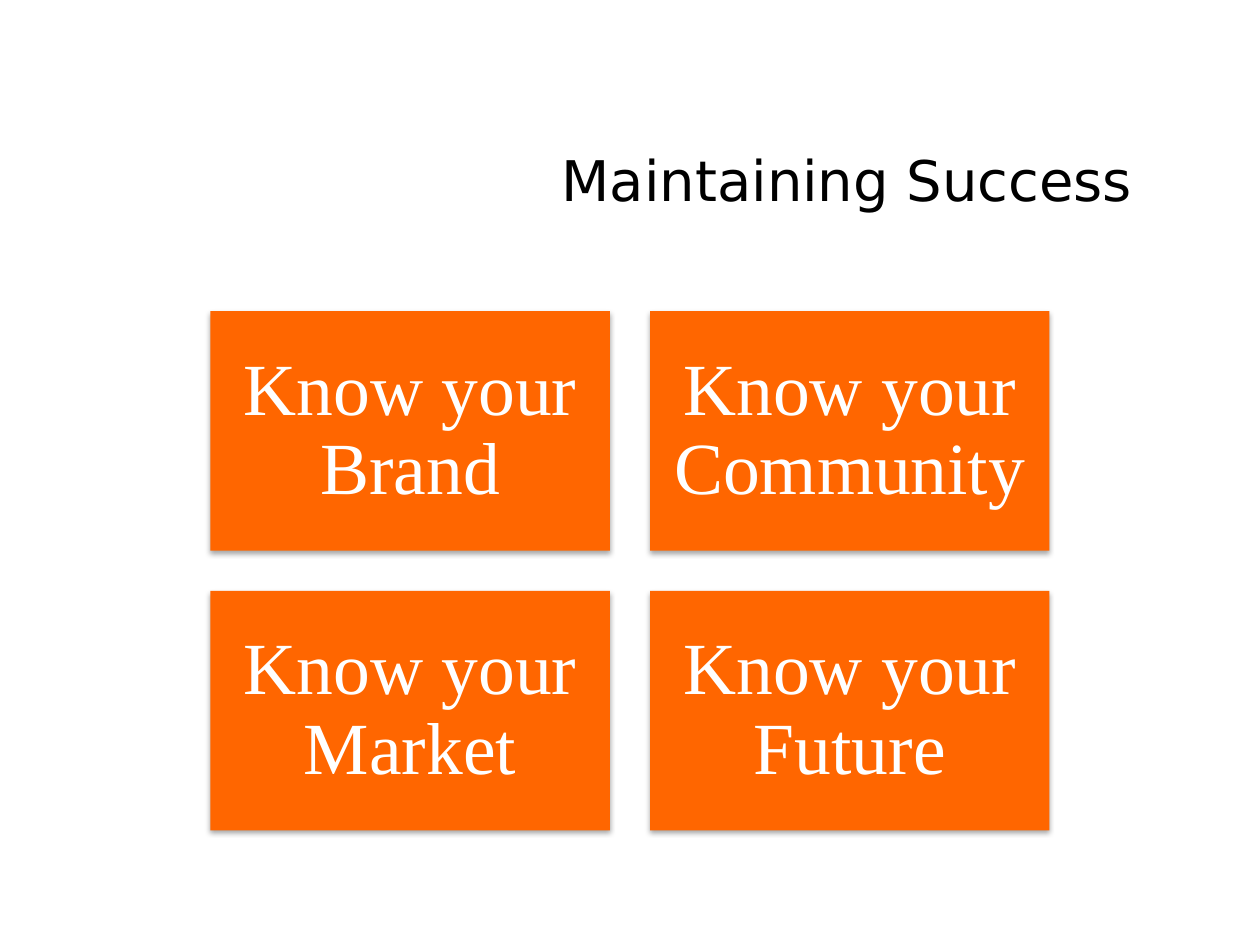
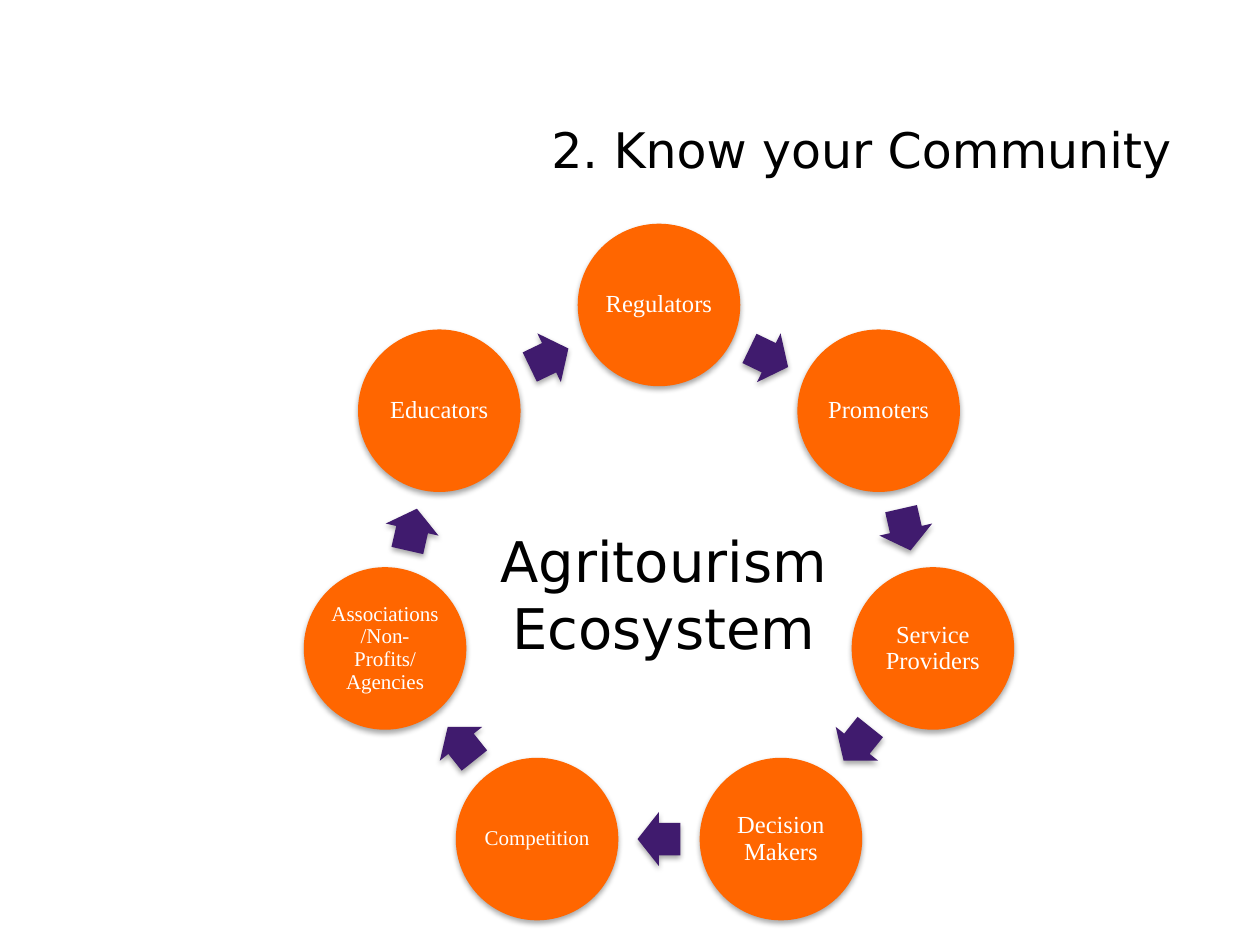
from math import cos, pi, sin

from lxml import etree
from pptx import Presentation
from pptx.dml.color import RGBColor
from pptx.enum import shapes, text
from pptx.util import Inches, Pt

COLORS = {"accent": "FF6600", "arrow": "401B6E", "heading": "000000", "label": "FFFFFF"}
HEADING_FONT, LABEL_FONT = "DejaVu Sans", "Times New Roman"
SHADOW = (
    '<a:effectLst xmlns:a="http://schemas.openxmlformats.org/drawingml/2006/main">'
    '<a:outerShdw blurRad="40000" dist="23000" dir="5400000" rotWithShape="0">'
    '<a:srgbClr val="000000"><a:alpha val="35000"/></a:srgbClr>'
    "</a:outerShdw></a:effectLst>"
)


def write(box, words, size, font, color, wrap=True, spacing=None):
    """Put centred text in a box, one paragraph per line of words."""
    frame = box.text_frame
    frame.text = words
    frame.word_wrap = wrap
    frame.vertical_anchor = text.MSO_ANCHOR.MIDDLE
    for para in frame.paragraphs:
        para.alignment = text.PP_ALIGN.CENTER
        para.line_spacing = spacing
        para.font.size = Pt(size)
        para.font.name = font
        para.font.color.rgb = RGBColor.from_string(COLORS[color])


def add_shadowed(page, kind, center, size, color, label="", label_size=14, inset=0.02):
    """Add a borderless shape with a soft shadow, placed by its centre."""
    (x, y), (width, height) = center, size
    shape = page.shapes.add_shape(kind, Inches(x - width / 2), Inches(y - height / 2),
                                  Inches(width), Inches(height))
    shape.fill.solid()
    shape.fill.fore_color.rgb = RGBColor.from_string(COLORS[color])
    shape.line.fill.background()
    shape._element.spPr.append(etree.fromstring(SHADOW))
    if label:
        frame = shape.text_frame
        frame.margin_left = frame.margin_right = Inches(inset)
        frame.margin_top = frame.margin_bottom = Inches(inset)
        write(shape, label, label_size, LABEL_FONT, "label", spacing=0.9)
    return shape


deck = Presentation()
deck.slide_width, deck.slide_height = Inches(10), Inches(7.5)

pages = []
for title, left, top, width, size in [
    ("Maintaining Success", 2.67, 1.01, 8.11, 32),
    ("2. Know your Community", 3.4, 0.77, 6.87, 28),
]:
    page = deck.slides.add_slide(deck.slide_layouts[6])
    box = page.shapes.add_textbox(Inches(left), Inches(top), Inches(width), Inches(0.83))
    write(box, title, size, HEADING_FONT, "heading")
    pages.append(page)
success_page, community_page = pages

# Two by two grid, centred across the slide
card_width, card_height, gap = 3.17, 1.9, 0.32
for i, topic in enumerate(["Brand", "Community", "Market", "Future"]):
    row, column = divmod(i, 2)
    center = (5 + (column - 0.5) * (card_width + gap),
              4.53 + (row - 0.5) * (card_height + gap))
    add_shadowed(success_page, shapes.MSO_SHAPE.RECTANGLE, center, (card_width, card_height),
                 "accent", f"Know your {topic}", 42, 0.17)

# Ring of members, clockwise from the top, with an arrow midway to the next
members = [
    ("Regulators", 14), ("Promoters", 14), ("Service Providers", 14), ("Decision Makers", 14),
    ("Competition", 12), ("Associations/Non-Profits/Agencies", 12), ("Educators", 14),
]
ring_x, ring_y, radius = 5.23, 4.65, 2.23
step = 2 * pi / len(members)
arrow_radius = radius * cos(step / 2)
for i, (member, size) in enumerate(members):
    angle = i * step
    center = (ring_x + radius * sin(angle), ring_y - radius * cos(angle))
    add_shadowed(community_page, shapes.MSO_SHAPE.OVAL, center, (1.29, 1.29),
                 "accent", member, size)
    angle += step / 2
    center = (ring_x + arrow_radius * sin(angle), ring_y - arrow_radius * cos(angle))
    arrow = add_shadowed(community_page, shapes.MSO_SHAPE.RIGHT_ARROW, center, (0.34, 0.43),
                         "arrow")
    arrow.adjustments[0], arrow.adjustments[1] = 0.6, 0.5
    arrow.rotation = (i + 0.5) * 360 / len(members)

hub = community_page.shapes.add_textbox(Inches(3.86), Inches(4.12), Inches(2.82), Inches(1.18))
write(hub, "Agritourism\nEcosystem", 32, HEADING_FONT, "heading", wrap=False)

deck.save("out.pptx")
